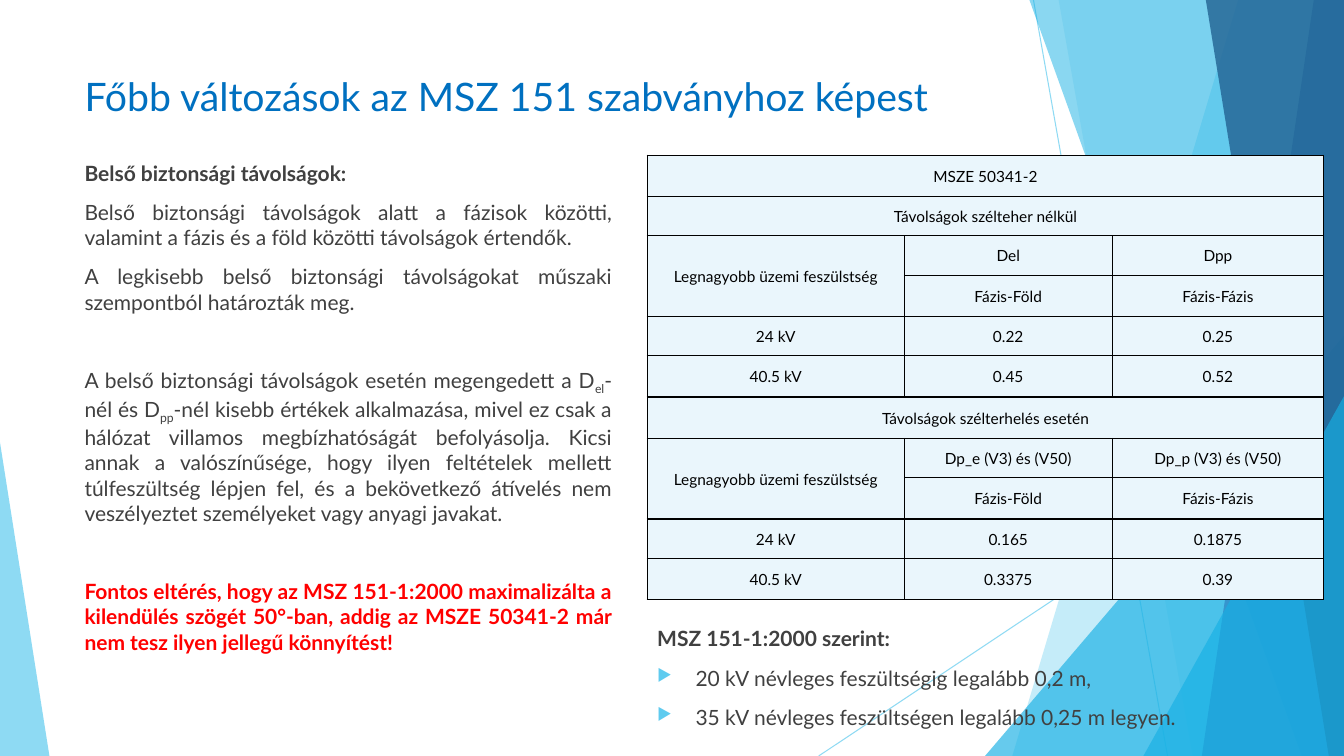
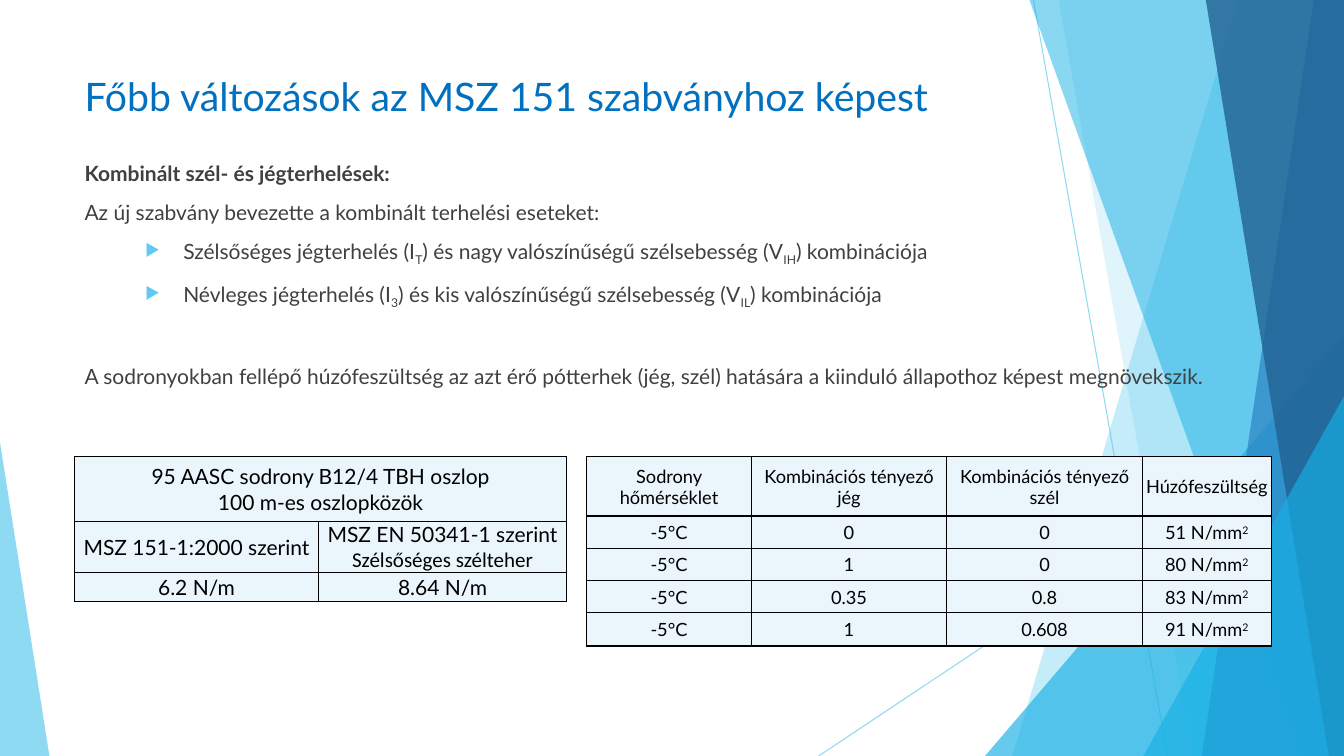
import dataclasses

import lxml.etree
import pptx
import pptx.dml.color
import pptx.enum.shapes
import pptx.enum.text
import pptx.oxml.ns
import pptx.util

SCALE = 9144
WIDE, HIGH = 1333, 750
ALIGN = pptx.enum.text.PP_ALIGN
ANCHOR = pptx.enum.text.MSO_ANCHOR
SHAPE = pptx.enum.shapes.MSO_SHAPE
LINK = pptx.enum.shapes.MSO_CONNECTOR


@dataclasses.dataclass(frozen=True)
class Theme:
    """Colours, fonts and type sizes of the deck."""
    title: str = "0070C0"
    body: str = "404040"
    alert: str = "FF0000"
    black: str = "000000"
    cell: str = "EAF6FC"
    sky: str = "5FCBEF"
    aqua: str = "17B0E4"
    blue: str = "2E83C3"
    navy: str = "226292"
    font: str = "Lato"
    plain: str = "Calibri"
    head: int = 28
    text: int = 15
    mid: int = 13
    small: int = 11
    gap: int = 10
    skip: int = 38


THEME = Theme()
TITLE = "Főbb változások az MSZ 151 szabványhoz képest"
BOLD = {"bold": True}
BULLET = {"left": 38, "bullet": True}
DEEP = {"left": 98, "bullet": True}
SKIP = {"before": THEME.skip}

RAYS = ((1025, 0, 1158, 750), (1333, 403, 812, 750))
FACETS = (
    ((1228, 1004), THEME.sky, 36),
    ((1050, 1183), THEME.sky, 20),
    ((977, 333, 356, 417, 1), THEME.aqua, 66),
    ((1021, 1291), THEME.aqua, 50),
    ((1303, 1192), THEME.blue, 70),
    ((1196, 1318), THEME.navy, 80),
    ((1134, 393, 199, 357, 1), THEME.aqua, 66),
    ((0, 439, 49, 311, 0), THEME.sky, 70),
)

SAFETY = (
    ("Belső biztonsági távolságok:", BOLD),
    "Belső biztonsági távolságok alatt a fázisok közötti, valamint a fázis és a föld "
    "közötti távolságok értendők.",
    "A legkisebb belső biztonsági távolságokat műszaki szempontból határozták meg.",
    ("A belső biztonsági távolságok esetén megengedett a D|el|-nél és D|pp|-nél kisebb "
     "értékek alkalmazása, mivel ez csak a hálózat villamos megbízhatóságát befolyásolja. "
     "Kicsi annak a valószínűsége, hogy ilyen feltételek mellett túlfeszültség lépjen fel, "
     "és a bekövetkező átívelés nem veszélyeztet személyeket vagy anyagi javakat.", SKIP),
    ("Fontos eltérés, hogy az MSZ 151-1:2000 maximalizálta a kilendülés szögét 50°-ban, "
     "addig az MSZE 50341-2 már nem tesz ilyen jellegű könnyítést!",
     {"color": THEME.alert, **BOLD, **SKIP}),
)
FORMER = (
    ("MSZ 151-1:2000 szerint:", BOLD),
    ("20 kV névleges feszültségig legalább 0,2 m,", BULLET),
    ("35 kV névleges feszültségen legalább 0,25 m legyen.", BULLET),
)
LOADS = (
    ("Kombinált szél- és jégterhelések:", BOLD),
    "Az új szabvány bevezette a kombinált terhelési eseteket:",
    ("Szélsőséges jégterhelés (I|T|) és nagy valószínűségű szélsebesség (V|IH|) "
     "kombinációja", DEEP),
    ("Névleges jégterhelés (I|3|) és kis valószínűségű szélsebesség (V|IL|) "
     "kombinációja", DEEP),
    ("A sodronyokban fellépő húzófeszültség az azt érő pótterhek (jég, szél) hatására "
     "a kiinduló állapothoz képest megnövekszik.", SKIP),
)
RANGE = "Legnagyobb üzemi feszülstség"
PHASES = (None, "Fázis-Föld", "Fázis-Fázis")
SPACING = (
    ("MSZE 50341-2",),
    ("Távolságok szélteher nélkül",),
    (RANGE, "Del", "Dpp"),
    PHASES,
    ("24 kV", "0.22", "0.25"),
    ("40.5 kV", "0.45", "0.52"),
    ("Távolságok szélterhelés esetén",),
    (RANGE, "Dp_e (V3) és (V50)", "Dp_p (V3) és (V50)"),
    PHASES,
    ("24 kV", "0.165", "0.1875"),
    ("40.5 kV", "0.3375", "0.39"),
)
CABLE = (
    (("95 AASC sodrony B12/4 TBH oszlop", "100 m-es oszlopközök"),),
    ("MSZ 151-1:2000 szerint",
     ("MSZ EN 50341-1 szerint", ("Szélsőséges szélteher", {"font": THEME.plain}))),
    ("6.2 N/m", "8.64 N/m"),
)
TENSION = (
    ("Sodrony hőmérséklet", "Kombinációs tényező jég", "Kombinációs tényező szél",
     "Húzófeszültség"),
    *(("-5°C", ice, wind, f"{pull} N/mm|2|") for ice, wind, pull in (
        ("0", "0", 51), ("1", "0", 80), ("0.35", "0.8", 83), ("1", "0.608", 91))),
)


def emu(size):
    """Turn px into EMU."""
    return pptx.util.Emu(size * SCALE)


def rgb(code):
    """Turn a hex code into a colour."""
    return pptx.dml.color.RGBColor.from_string(code)


def node(parent, tag, **attrs):
    """Append a drawing element with its attributes."""
    child = lxml.etree.SubElement(parent, pptx.oxml.ns.qn("a:" + tag))
    for name, value in attrs.items():
        child.set(name, str(value))
    return child


def fade(shape, alpha):
    """Give every plain colour of a shape an opacity in percent."""
    for tint in shape.element.iter(pptx.oxml.ns.qn("a:srgbClr")):
        node(tint, "alpha", val=alpha * 1000)


def write(para, text, size=THEME.text, color=THEME.body, font=THEME.font, bold=False,
          align=ALIGN.JUSTIFY, before=0, left=0, bullet=False, shift=-25):
    """Write one paragraph, moving the parts between bars off the baseline."""
    para.alignment = align
    para.space_before = pptx.util.Pt(before)
    if bullet:
        props = para._p.get_or_add_pPr()
        props.set("marL", str(emu(left)))
        props.set("indent", str(emu(-38)))
        node(node(props, "buClr"), "srgbClr", val=THEME.sky)
        node(props, "buSzPct", val=80000)
        node(props, "buChar", char="▶")
    for spot, part in enumerate(text.split("|")):
        if not part:
            continue
        run = para.add_run()
        run.text = part
        run.font.size = pptx.util.Pt(size)
        run.font.name = font
        run.font.bold = bold
        run.font.color.rgb = rgb(color)
        if spot % 2:
            run._r.get_or_add_rPr().set("baseline", str(shift * 1000))


def fill(frame, lines, **look):
    """Fill a frame with lines, each a text or a text with its own format."""
    for spot, line in enumerate(lines):
        para = frame.add_paragraph() if spot else frame.paragraphs[0]
        text, own = (line, {}) if isinstance(line, str) else line
        write(para, text, **{**look, **own})


def block(slide, box, lines, **look):
    """Place a wrapped block of text in a box."""
    frame = slide.shapes.add_textbox(*map(emu, box)).text_frame
    frame.word_wrap = True
    frame.vertical_anchor = ANCHOR.TOP
    fill(frame, lines, **look)


def facet(shapes, box, spots):
    """Add a band to the right edge or a corner triangle."""
    x, y, wide, high = box
    if len(spots) == 2:
        top, foot = spots
        right = x + wide
        path = shapes.build_freeform(x + top, y, scale=SCALE)
        path.add_line_segments(((right, y), (right, y + high), (x + foot, y + high)))
        return path.convert_to_shape()
    left, top, across, down, peak = spots
    shape = shapes.add_shape(SHAPE.ISOSCELES_TRIANGLE,
                             *map(emu, (x + left, y + top, across, down)))
    shape.adjustments[0] = peak
    return shape


def backdrop(slide, box):
    """Draw the rays and tinted facets behind the content."""
    shapes = slide.shapes.add_group_shape().shapes
    x, y = box[:2]
    for left, top, right, foot in RAYS:
        ray = shapes.add_connector(
            LINK.STRAIGHT, *map(emu, (x + left, y + top, x + right, y + foot)))
        ray.line.color.rgb = rgb(THEME.sky)
        ray.line.width = pptx.util.Pt(0.75)
        fade(ray, 70)
        node(ray.element.spPr, "effectLst")
    for spots, color, alpha in FACETS:
        shape = facet(shapes, box, spots)
        shape.shadow.inherit = False
        shape.fill.solid()
        shape.fill.fore_color.rgb = rgb(color)
        shape.line.fill.background()
        fade(shape, alpha)


def style(cell):
    """Give a cell its borders, fill and margins."""
    props = cell._tc.get_or_add_tcPr()
    for side in "LRTB":
        edge = node(props, "ln" + side, w=12700)
        node(node(edge, "solidFill"), "srgbClr", val=THEME.black)
    cell.fill.solid()
    cell.fill.fore_color.rgb = rgb(THEME.cell)
    cell.vertical_anchor = ANCHOR.MIDDLE
    cell.margin_left = cell.margin_right = cell.margin_top = emu(1)
    cell.margin_bottom = 0


def grid(slide, spot, cols, rows, data, size):
    """Place a table; a lone cell spans its row and None joins the cell above."""
    box = (*spot, sum(cols), sum(rows))
    table = slide.shapes.add_table(len(rows), len(cols), *map(emu, box)).table
    table.first_row = table.horz_banding = False
    for col, width in zip(table.columns, cols):
        col.width = emu(width)
    for row, height in zip(table.rows, rows):
        row.height = emu(height)
    for cell in table.iter_cells():
        style(cell)
    for r, items in enumerate(data):
        for c, item in enumerate(items):
            if item is None:
                table.cell(r - 1, c).merge(table.cell(r, c))
                continue
            lines = (item,) if isinstance(item, str) else item
            fill(table.cell(r, c).text_frame, lines, size=size, color=THEME.black,
                 align=ALIGN.CENTER, shift=30)
        if len(items) == 1:
            table.cell(r, 0).merge(table.cell(r, len(cols) - 1))


def base(deck, box):
    """Add a slide with the shared backdrop and title."""
    slide = deck.slides.add_slide(deck.slide_layouts[6])
    backdrop(slide, (0, 0, WIDE, HIGH))
    block(slide, box, (TITLE,), size=THEME.head, color=THEME.title, align=ALIGN.LEFT)
    return slide


def safety(deck, box):
    """Build the slide on safety distances."""
    x, y = box[:2]
    slide = base(deck, (x, y, 940, 66))
    block(slide, (x, y + 87, 543, 549), SAFETY, before=THEME.gap)
    grid(slide, (x + 568, y + 87), (255, 206, 210),
         (41, 39, 39, 41, 39, 41, 41, 39, 41, 39, 41), SPACING, THEME.small)
    block(slide, (x + 568, y + 549, 671, 115), FORMER, before=THEME.gap)


def loads(deck, box):
    """Build the slide on combined wind and ice loads."""
    x, y, wide = box[:3]
    slide = base(deck, (x, y, 1045, 78))
    block(slide, (x, y + 87, wide, 256), LOADS, before=THEME.gap)
    grid(slide, (x, y + 386), (242, 246), (64, 51, 29), CABLE, THEME.text)
    grid(slide, (x + 508, y + 386), (163, 194, 194, 128), (59, 32, 32, 32, 33),
         TENSION, THEME.mid)


def main():
    """Build and save the deck."""
    deck = pptx.Presentation()
    deck.slide_width, deck.slide_height = emu(WIDE), emu(HIGH)
    area = (74, 67, 1220, 664)
    safety(deck, area)
    loads(deck, area)
    deck.save("out.pptx")


if __name__ == "__main__":
    main()
